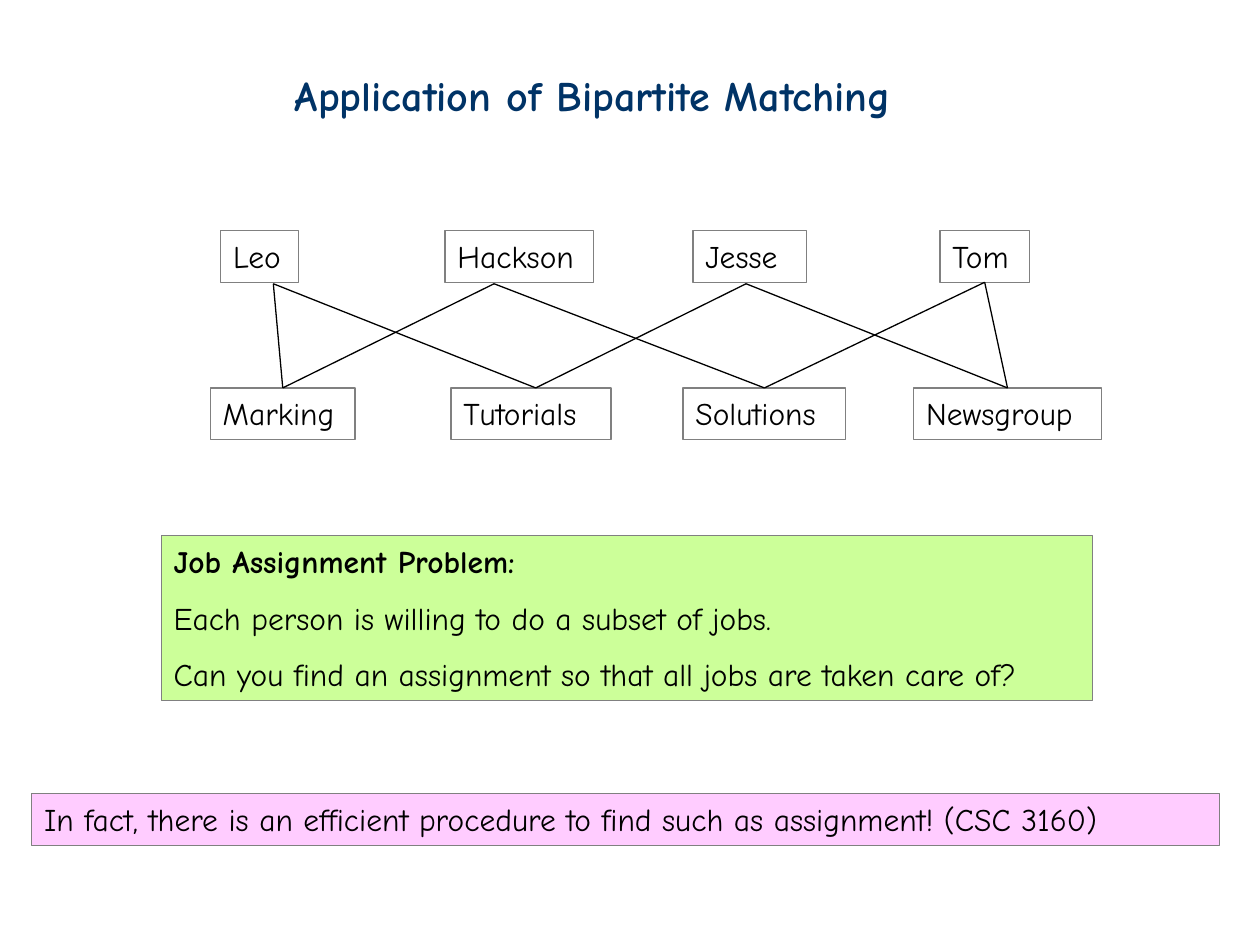
from lxml import etree
from pptx import Presentation
from pptx import util as u
from pptx.dml.color import RGBColor
from pptx.enum import shapes, text
from pptx.oxml.ns import qn

COLORS = {
    "title": "003366",
    "text": "000000",
    "border": "808080",
    "edge": "000000",
    "problem": "CCFF99",
    "remark": "FFCCFF",
}
FONT = "Comic Neue"
NODE_HEIGHT = 1.04
JOB_TOP = 3.17
PORT_TOP = 1.07

# name, left, width, x where its edges meet
PEOPLE = [
    ("Leo", 0.21, 1.57, 1.27),
    ("Hackson", 4.73, 3.0, 5.72),
    ("Jesse", 9.73, 2.29, 10.8),
    ("Tom", 14.71, 1.8, 15.65),
]
JOBS = [
    ("Marking", 0, 2.92, 1.48),
    ("Tutorials", 4.85, 3.23, 6.56),
    ("Solutions", 9.53, 3.28, 11.2),
    ("Newsgroup", 14.18, 3.78, 16.08),
]
WILLING = {
    "Leo": ["Marking", "Tutorials"],
    "Hackson": ["Marking", "Solutions"],
    "Jesse": ["Tutorials", "Newsgroup"],
    "Tom": ["Newsgroup", "Solutions"],
}


def color(name):
    return RGBColor.from_string(COLORS[name])


def write(box, lines, ink="text", size=18):
    frame = box.text_frame
    settings = {
        "word_wrap": True,
        "auto_size": text.MSO_AUTO_SIZE.NONE,
        "vertical_anchor": text.MSO_ANCHOR.TOP,
    }
    for name, value in settings.items():
        setattr(frame, name, value)
    for number, (words, bold, spacing) in enumerate(lines):
        para = frame.add_paragraph() if number else frame.paragraphs[0]
        para.alignment = text.PP_ALIGN.LEFT
        para.line_spacing = spacing
        span = para.add_run()
        span.text = words
        looks = {"name": FONT, "size": u.Pt(size), "bold": bold}
        for name, value in looks.items():
            setattr(span.font, name, value)
        span.font.color.rgb = color(ink)


def add_box(page, left, top, width, height, lines, fill=None):
    box = page.shapes.add_shape(
        shapes.MSO_SHAPE.RECTANGLE, u.Cm(left), u.Cm(top), u.Cm(width), u.Cm(height)
    )
    box.shadow.inherit = False
    if fill:
        box.fill.solid()
        box.fill.fore_color.rgb = color(fill)
    else:
        box.fill.background()
    box.line.color.rgb = color("border")
    box.line.width = u.Pt(0.75)
    write(box, lines)
    return box


def add_title(page, left, top, width, height):
    title = page.shapes.title
    place = {"left": left, "top": top, "width": width, "height": height}
    for name, value in place.items():
        setattr(title, name, u.Cm(value))
    write(title, [("Application of Bipartite Matching", True, 1.0)], "title", 24)


def add_nodes(page, left, top, nodes):
    ends = {}
    for name, offset, width, port in nodes:
        box = add_box(page, left + offset, top, width, NODE_HEIGHT, [(name, False, 1.0)])
        centred = abs(offset + width / 2 - port) < 0.05
        ends[name] = (box if centred else None, left + port)
    return ends


def add_graph(page, left, top):
    people = add_nodes(page, left, top, PEOPLE)
    jobs = add_nodes(page, left, top + JOB_TOP, JOBS)
    for person, choices in WILLING.items():
        person_box, person_x = people[person]
        for job in choices:
            job_box, job_x = jobs[job]
            edge = page.shapes.add_connector(
                shapes.MSO_CONNECTOR.STRAIGHT,
                u.Cm(person_x), u.Cm(top + PORT_TOP),
                u.Cm(job_x), u.Cm(top + JOB_TOP),
            )
            edge.line.color.rgb = color("edge")
            edge.line.width = u.Pt(0.75)
            etree.SubElement(edge._element.spPr, qn("a:effectLst"))
            if person_box:
                edge.begin_connect(person_box, 2)
            if job_box:
                edge.end_connect(job_box, 0)


def add_problem(page, left, top, width, height):
    lines = [
        ("Job Assignment Problem:", True, 1.0),
        ("Each person is willing to do a subset of jobs.", False, 1.5),
        ("Can you find an assignment so that all jobs are taken care of?", False, 1.5),
    ]
    add_box(page, left, top, width, height, lines, "problem")


def add_remark(page, left, top, width, height):
    words = "In fact, there is an efficient procedure to find such as assignment! (CSC 3160)"
    add_box(page, left, top, width, height, [(words, False, 1.0)], "remark")


def main():
    deck = Presentation()
    deck.slide_width, deck.slide_height = u.Cm(25.4), u.Cm(19.05)
    page = deck.slides.add_slide(deck.slide_layouts[5])
    add_title(page, 5.69, 1.27, 14.2, 1.27)
    add_graph(page, 4.24, 4.65)
    add_problem(page, 3.25, 10.8, 18.77, 3.33)
    add_remark(page, 0.64, 16, 23.95, NODE_HEIGHT)
    deck.save("out.pptx")


if __name__ == "__main__":
    main()
